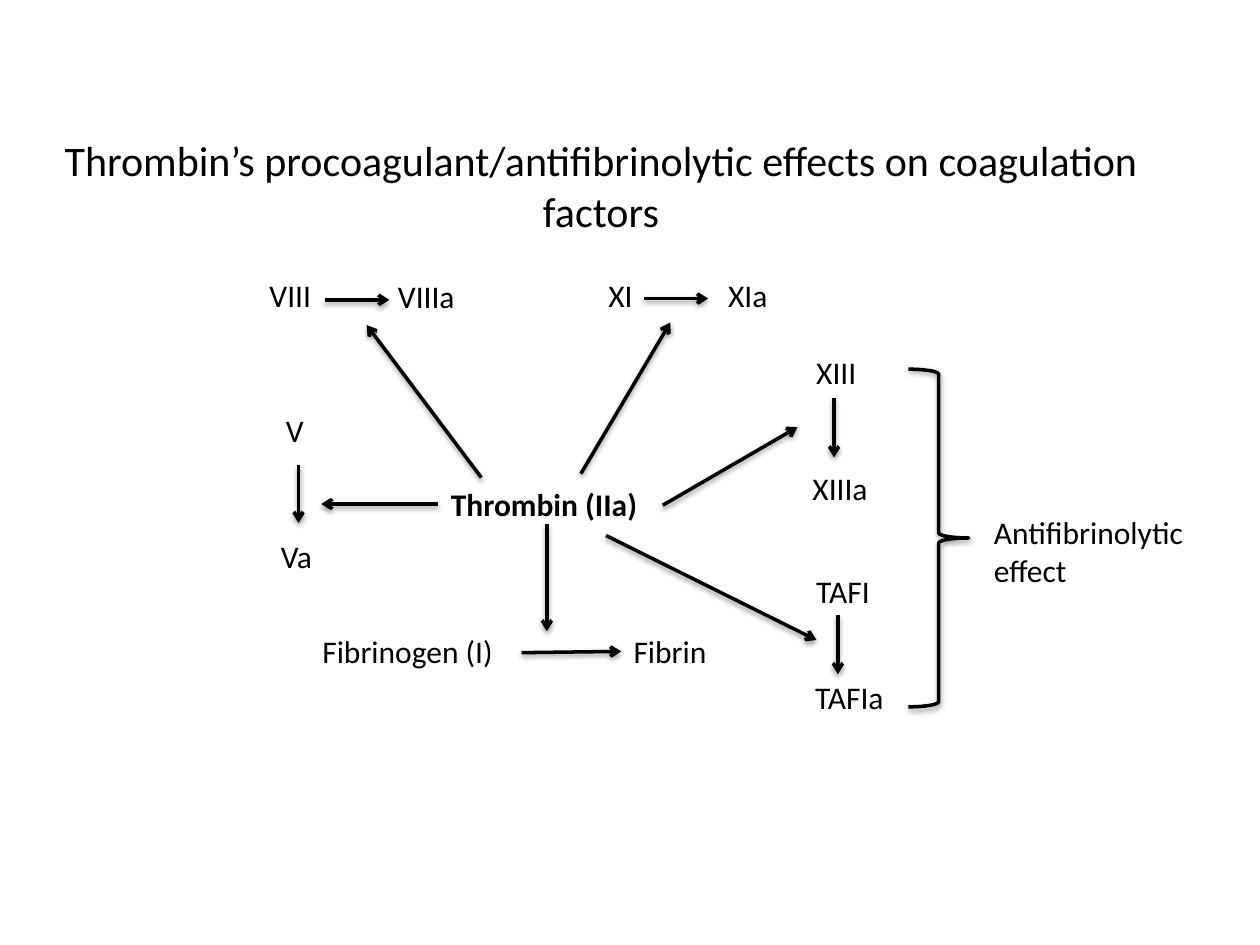
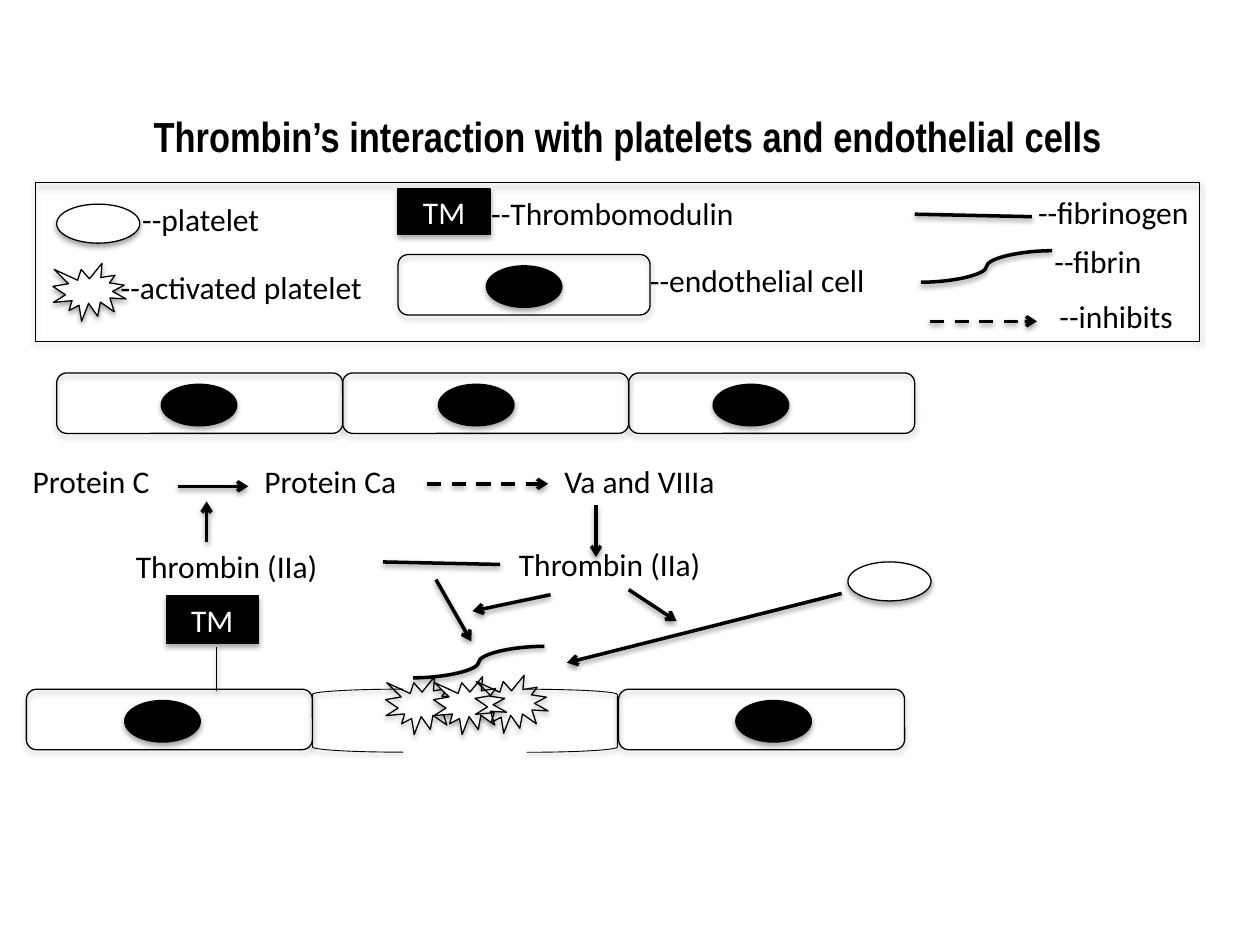
import pptx
import pptx.util
import pptx.dml.color
import pptx.enum.dml
import pptx.enum.shapes
import pptx.enum.text
import pptx.oxml.ns
from lxml import etree

Inches = pptx.util.Inches
Pt = pptx.util.Pt
SHAPE = pptx.enum.shapes.MSO_SHAPE
CONNECTOR = pptx.enum.shapes.MSO_CONNECTOR
ALIGN = pptx.enum.text.PP_ALIGN
ANCHOR = pptx.enum.text.MSO_ANCHOR
AUTO_SIZE = pptx.enum.text.MSO_AUTO_SIZE
DASH = pptx.enum.dml.MSO_LINE.DASH
qn = pptx.oxml.ns.qn

BLACK = pptx.dml.color.RGBColor(0x00, 0x00, 0x00)
WHITE = pptx.dml.color.RGBColor(0xFF, 0xFF, 0xFF)
BODY_FONT = "Calibri"
LABEL_HEIGHT = 0.4
CELL_WIDTH = 2.27
CELL_HEIGHT = 0.48


def write_text(shape, text, size=18, font=BODY_FONT, color=BLACK, bold=False,
               align=ALIGN.LEFT, anchor=ANCHOR.TOP, auto_size=AUTO_SIZE.NONE):
    frame = shape.text_frame
    frame.word_wrap = True
    frame.auto_size = auto_size
    frame.vertical_anchor = anchor
    paragraph = frame.paragraphs[0]
    paragraph.alignment = align
    run = paragraph.add_run()
    run.text = text
    run.font.size = Pt(size)
    run.font.name = font
    run.font.bold = bold
    run.font.color.rgb = color


def add_title(slide, text, left, top, width, **text_format):
    title = slide.shapes.title
    title.left, title.top = Inches(left), Inches(top)
    title.width, title.height = Inches(width), Inches(0.88)
    write_text(title, text, size=24, **text_format)


def add_label(slide, text, left, top, width, height=LABEL_HEIGHT, **text_format):
    label = slide.shapes.add_textbox(Inches(left), Inches(top), Inches(width), Inches(height))
    write_text(label, text, auto_size=AUTO_SIZE.SHAPE_TO_FIT_TEXT, **text_format)
    return label


def add_shadow(shape, opacity, distance):
    properties = shape._element.spPr
    effects = properties.find(qn("a:effectLst"))
    if effects is None:
        effects = etree.SubElement(properties, qn("a:effectLst"))
    shadow = etree.SubElement(effects, qn("a:outerShdw"), blurRad=str(Pt(3.1)),
                              dist=str(Pt(distance)), dir="5400000", rotWithShape="0")
    color = etree.SubElement(shadow, qn("a:srgbClr"), val=str(BLACK))
    etree.SubElement(color, qn("a:alpha"), val=str(opacity * 1000))


def add_outline(slide, kind, left, top, width, height, fill=None, weight=0.75,
                opacity=35, distance=1.8):
    shape = slide.shapes.add_shape(kind, Inches(left), Inches(top), Inches(width), Inches(height))
    if fill is None:
        shape.fill.background()
    else:
        shape.fill.solid()
        shape.fill.fore_color.rgb = fill
    shape.line.color.rgb = BLACK
    shape.line.width = Pt(weight)
    shape.shadow.inherit = False
    add_shadow(shape, opacity, distance)
    return shape


def add_line(slide, start, end, kind=CONNECTOR.STRAIGHT, dashed=False, arrow=False):
    connector = slide.shapes.add_connector(kind, *map(Inches, start + end))
    connector.line.color.rgb = BLACK
    connector.line.width = Pt(2)
    if dashed:
        connector.line.dash_style = DASH
    if arrow:
        etree.SubElement(connector.line._get_or_add_ln(), qn("a:tailEnd"), type="arrow")
    add_shadow(connector, 38, 1.6)
    return connector


def add_arrow(slide, start, end, dashed=False):
    return add_line(slide, start, end, dashed=dashed, arrow=True)


def add_endothelial_cell(slide, left, top, nucleus_offset, width=CELL_WIDTH):
    add_outline(slide, SHAPE.ROUNDED_RECTANGLE, left, top, width, CELL_HEIGHT)
    add_outline(slide, SHAPE.OVAL, left + nucleus_offset, top + 0.09, 0.6, 0.33, fill=BLACK)


def add_platelet(slide, left, top):
    add_outline(slide, SHAPE.OVAL, left, top, 0.66, 0.31, fill=WHITE)


def add_activated_platelet(slide, left, top, fill=None):
    add_outline(slide, SHAPE.EXPLOSION1, left, top, 0.58, 0.46, fill=fill)


def add_thrombomodulin(slide, kind, left, top, height):
    box = add_outline(slide, kind, left, top, 0.73, height, fill=BLACK)
    write_text(box, "TM", color=WHITE, align=ALIGN.CENTER, anchor=ANCHOR.MIDDLE)
    return box


def add_fibrin(slide, left, top):
    add_line(slide, (left, top + 0.25), (left + 1.04, top), kind=CONNECTOR.CURVE)


def add_fibrinogen(slide, left, top):
    add_line(slide, (left, top), (left + 0.93, top + 0.02))


def build_factors_slide(slide):
    add_title(slide, "Thrombin’s procoagulant/antifibrinolytic effects on coagulation factors",
              0, 1.03, 9.54, align=ALIGN.CENTER, anchor=ANCHOR.MIDDLE)
    thrombin = add_label(slide, "Thrombin (IIa)", 3.48, 3.8, 1.93, bold=True)
    fibrin = add_label(slide, "Fibrin", 4.93, 4.97, 1.09)
    for text, left, top, width in [
        ("Fibrinogen (I)", 2.46, 4.97, 1.71),
        ("XIII", 6.38, 2.75, 0.9),
        ("XIIIa", 6.35, 3.67, 0.77),
        ("TAFI", 6.38, 4.49, 0.76),
        ("TAFIa", 6.37, 5.33, 0.95),
        ("VIII", 2.04, 2.14, 0.66),
        ("VIIIa", 3.06, 2.15, 0.86),
        ("V", 2.17, 3.21, 0.33),
        ("Va", 2.13, 4.21, 0.72),
        ("XI", 4.73, 2.14, 0.45),
        ("XIa", 5.68, 2.14, 0.58),
    ]:
        add_label(slide, text, left, top, width)
    add_label(slide, "Antifibrinolytic effect", 7.79, 4.02, 1.75, height=0.71)

    activations = [
        ((2.58, 2.38), (3.09, 2.38)),
        ((5.11, 2.37), (5.62, 2.37)),
        ((2.37, 3.69), (2.37, 4.15)),
        ((6.62, 3.16), (6.62, 3.63)),
        ((6.65, 4.88), (6.65, 5.35)),
    ]
    thrombin_effects = [
        ((3.82, 3.79), (2.91, 2.58)),
        ((4.61, 3.76), (5.32, 2.56)),
        ((5.26, 4.01), (6.33, 3.39)),
        ((4.81, 4.25), (6.48, 5.08)),
        ((4.34, 4.16), (4.34, 5.01)),
    ]
    for start, end in activations + thrombin_effects:
        add_arrow(slide, start, end)
    add_arrow(slide, (3.48, 4), (2.55, 4)).begin_connect(thrombin, 1)
    add_arrow(slide, (4.14, 5.18), (4.93, 5.17)).end_connect(fibrin, 1)
    add_outline(slide, SHAPE.RIGHT_BRACE, 7.21, 2.93, 0.48, 2.68, weight=2,
                opacity=38, distance=1.6)


def build_legend(slide):
    add_outline(slide, SHAPE.RECTANGLE, 0.28, 1.45, 9.24, 1.26)
    add_platelet(slide, 0.45, 1.62)
    add_activated_platelet(slide, 0.42, 2.09, fill=WHITE)
    add_thrombomodulin(slide, SHAPE.RECTANGLE, 3.16, 1.5, 0.36)
    add_endothelial_cell(slide, 3.16, 2.02, 0.7, width=2)
    add_fibrinogen(slide, 7.26, 1.7)
    add_fibrin(slide, 7.31, 1.99)
    add_arrow(slide, (7.38, 2.55), (8.23, 2.55), dashed=True)
    for text, left, top, width in [
        ("--platelet", 1.03, 1.54, 1.3),
        ("--activated platelet", 0.86, 2.08, 2.46),
        ("--Thrombomodulin", 3.8, 1.49, 2.46),
        ("--endothelial cell", 5.06, 2.02, 2.08),
        ("--fibrinogen", 8.14, 1.48, 1.64),
        ("--fibrin", 8.27, 1.87, 0.97),
        ("--inhibits", 8.31, 2.31, 1.18),
    ]:
        add_label(slide, text, left, top, width)


def build_vessel_walls(slide):
    for index, nucleus_offset in enumerate((0.83, 0.76, 0.67)):
        add_endothelial_cell(slide, 0.45 + index * CELL_WIDTH, 2.96, nucleus_offset)
    for left, nucleus_offset in ((0.21, 0.78), (4.91, 0.93)):
        add_endothelial_cell(slide, left, 5.47, nucleus_offset)
    for left, rotation in ((2.48, 0), (4.18, 180)):
        bracket = add_outline(slide, SHAPE.LEFT_BRACKET, left, 5.47, 0.72, 0.5, weight=0.5,
                              opacity=38, distance=1.6)
        bracket.rotation = rotation
    for left, top, fill in ((3.06, 5.37, None), (3.44, 5.37, WHITE), (3.77, 5.36, None)):
        add_activated_platelet(slide, left, top, fill)


def build_interactions_slide(slide):
    add_title(slide, "Thrombin’s interaction with platelets and endothelial cells",
              1.12, 0.83, 8.05, font="Arial Narrow", bold=True)
    build_legend(slide)
    build_vessel_walls(slide)

    receptor = add_thrombomodulin(slide, SHAPE.LINE_CALLOUT_1, 1.32, 4.73, 0.38)
    for index, value in enumerate((1.06, 0.55, 1.98, 0.55)):
        receptor.adjustments[index] = value
    add_platelet(slide, 6.73, 4.46)
    add_fibrin(slide, 3.28, 5.13)
    add_fibrinogen(slide, 3.04, 4.46)
    for text, left, top, width in [
        ("Protein C", 0.16, 3.62, 1.35),
        ("Protein Ca", 2, 3.62, 1.77),
        ("Va and VIIIa", 4.38, 3.62, 1.95),
        ("Thrombin (IIa)", 0.98, 4.29, 1.93),
        ("Thrombin (IIa)", 4.02, 4.28, 1.93),
    ]:
        add_label(slide, text, left, top, width)

    for start, end in [
        ((1.64, 4.3), (1.64, 3.98)),
        ((1.41, 3.86), (1.97, 3.86)),
        ((4.73, 4.01), (4.73, 4.42)),
        ((4.99, 4.68), (5.37, 4.93)),
        ((6.68, 4.71), (4.5, 5.26)),
        ((4.37, 4.72), (3.75, 4.85)),
        ((3.46, 4.6), (3.74, 5.09)),
    ]:
        add_arrow(slide, start, end)
    add_arrow(slide, (3.39, 3.84), (4.35, 3.84), dashed=True)


def main():
    presentation = pptx.Presentation()
    presentation.slide_width = Inches(10)
    presentation.slide_height = Inches(7.5)
    title_only = presentation.slide_layouts[5]
    for build_slide in (build_factors_slide, build_interactions_slide):
        build_slide(presentation.slides.add_slide(title_only))
    presentation.save("out.pptx")


if __name__ == "__main__":
    main()
